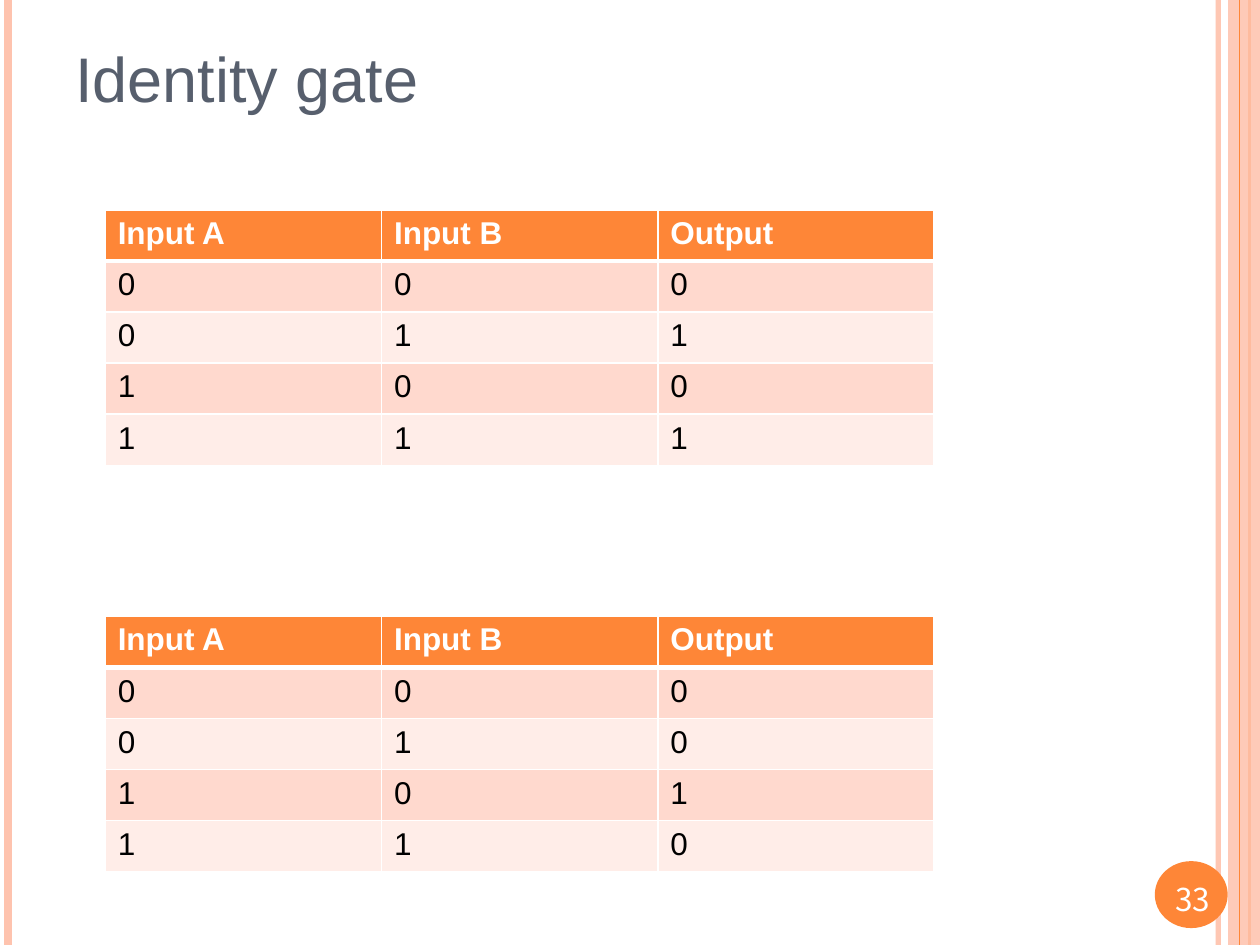
import dataclasses
import typing

import pptx
import pptx.dml.color
import pptx.enum.shapes
import pptx.enum.text
import pptx.oxml
import pptx.oxml.ns
import pptx.util
from lxml import etree
from pptx.util import Cm, Pt

ORANGE, PEACH, WHITE = "FE8637", "FEC3AE", "FFFFFF"
BANDS = ("FFD9CE", "FFEDE8")
WIDE, HIGH = 25.4, 19.05
HEADS = ("Input A", "Input B", "Output")
PAIRS = ("00", "01", "10", "11")
qn = pptx.oxml.ns.qn


@dataclasses.dataclass
class Stripe:
    left: float
    width: float
    color: str
    alpha: int = 100


@dataclasses.dataclass
class Truth:
    top: float
    outs: str


STRIPES = (
    Stripe(24.56, 3, PEACH, 93),
    Stripe(0.16, 4.5, PEACH),
    Stripe(25.19, 1.5, ORANGE),
)
INNER = Stripe(24.98, 0.75, ORANGE)
TABLES = (Truth(4.23, "0101"), Truth(12.42, "0010"))


def paint(form: typing.Any, color: str, alpha: int = 100) -> None:
    """Set a solid colour on a fill, with optional opacity in percent."""
    form.solid()
    form.fore_color.rgb = pptx.dml.color.RGBColor.from_string(color)
    if alpha < 100:
        node = form._xPr.find(qn("a:solidFill"))[0]
        etree.SubElement(node, qn("a:alpha"), val=str(alpha * 1000))


def write(para: typing.Any, text: str, size: float, color: str,
          font: str = "Arial", bold: bool = False) -> None:
    run = para.add_run()
    run.text = text
    run.font.size, run.font.name, run.font.bold = Pt(size), font, bold
    paint(run.font.fill, color)
    if font != "Arial":
        etree.SubElement(run.font._element, qn("a:ea"), typeface=font)


def rule(slide: typing.Any, item: Stripe) -> None:
    """Draw a stripe line over the full slide height."""
    line = slide.shapes.add_connector(
        pptx.enum.shapes.MSO_CONNECTOR.STRAIGHT,
        Cm(item.left), Cm(0), Cm(item.left), Cm(HIGH))
    line.line.width = Pt(item.width)
    paint(line.line.fill, item.color, item.alpha)
    etree.SubElement(line._element.spPr, qn("a:effectLst"))


def block(slide: typing.Any, kind: typing.Any, box: tuple,
          color: str, alpha: int = 100) -> None:
    shape = slide.shapes.add_shape(kind, *map(Cm, box))
    shape.shadow.inherit = False
    shape.line.fill.background()
    paint(shape.fill, color, alpha)


def border(cell: typing.Any, row: int) -> None:
    """White borders, thicker between the header and the body."""
    props = cell._tc.get_or_add_tcPr()
    heavy = {0: "B", 1: "T"}.get(row)
    for side in "LRTB":
        width = Pt(3 if side == heavy else 1)
        edge = etree.SubElement(props, qn(f"a:ln{side}"), w=str(width))
        solid = etree.SubElement(edge, qn("a:solidFill"))
        etree.SubElement(solid, qn("a:srgbClr"), val=WHITE)


def truth(slide: typing.Any, item: Truth) -> None:
    """Draw one truth table."""
    rows = [HEADS] + [(*pair, out) for pair, out in zip(PAIRS, item.outs)]
    grid = slide.shapes.add_table(
        len(rows), len(HEADS), Cm(2.12), Cm(item.top), Cm(16.71), Cm(5.15)).table
    for r, row in enumerate(rows):
        head = r == 0
        for c, text in enumerate(row):
            cell = grid.cell(r, c)
            border(cell, r)
            paint(cell.fill, ORANGE if head else BANDS[(r - 1) % 2])
            write(cell.text_frame.paragraphs[0], text, 18,
                  WHITE if head else "000000", bold=head)


def main() -> None:
    deck = pptx.Presentation()
    deck.slide_width, deck.slide_height = Cm(WIDE), Cm(HIGH)
    slide = deck.slides.add_slide(deck.slide_layouts[5])

    # Side stripes and number disc
    kinds = pptx.enum.shapes.MSO_SHAPE
    for item in STRIPES:
        rule(slide, item)
    block(slide, kinds.RECTANGLE, (24.76, 0, 0.64, HIGH), PEACH, 87)
    rule(slide, INNER)
    block(slide, kinds.OVAL, (23.28, 17.36, 1.47, 1.35), ORANGE)

    # Title
    title = slide.shapes.title
    title.left, title.top, title.width, title.height = map(
        Cm, (1.27, 0.42, 21.59, 1.9))
    frame = title.text_frame
    frame.auto_size = pptx.enum.text.MSO_AUTO_SIZE.NONE
    frame.vertical_anchor = pptx.enum.text.MSO_ANCHOR.BOTTOM
    frame.margin_left = frame.margin_right = Cm(0.25)
    frame.margin_top, frame.margin_bottom = Cm(0.2), Cm(0)
    para = frame.paragraphs[0]
    para.alignment = pptx.enum.text.PP_ALIGN.LEFT
    write(para, "Identity gate", 36, "575F6D")

    # Truth tables
    for item in TABLES:
        truth(slide, item)

    # Page number
    page = slide.shapes.add_textbox(*map(Cm, (23.2, 17.41, 1.7, 1.44))).text_frame
    page.word_wrap = True
    page.vertical_anchor = pptx.enum.text.MSO_ANCHOR.MIDDLE
    para = page.paragraphs[0]
    para.alignment = pptx.enum.text.PP_ALIGN.CENTER
    write(para, "33", 18, WHITE, "Noto Sans CJK JP")

    deck.save("out.pptx")


if __name__ == "__main__":
    main()
